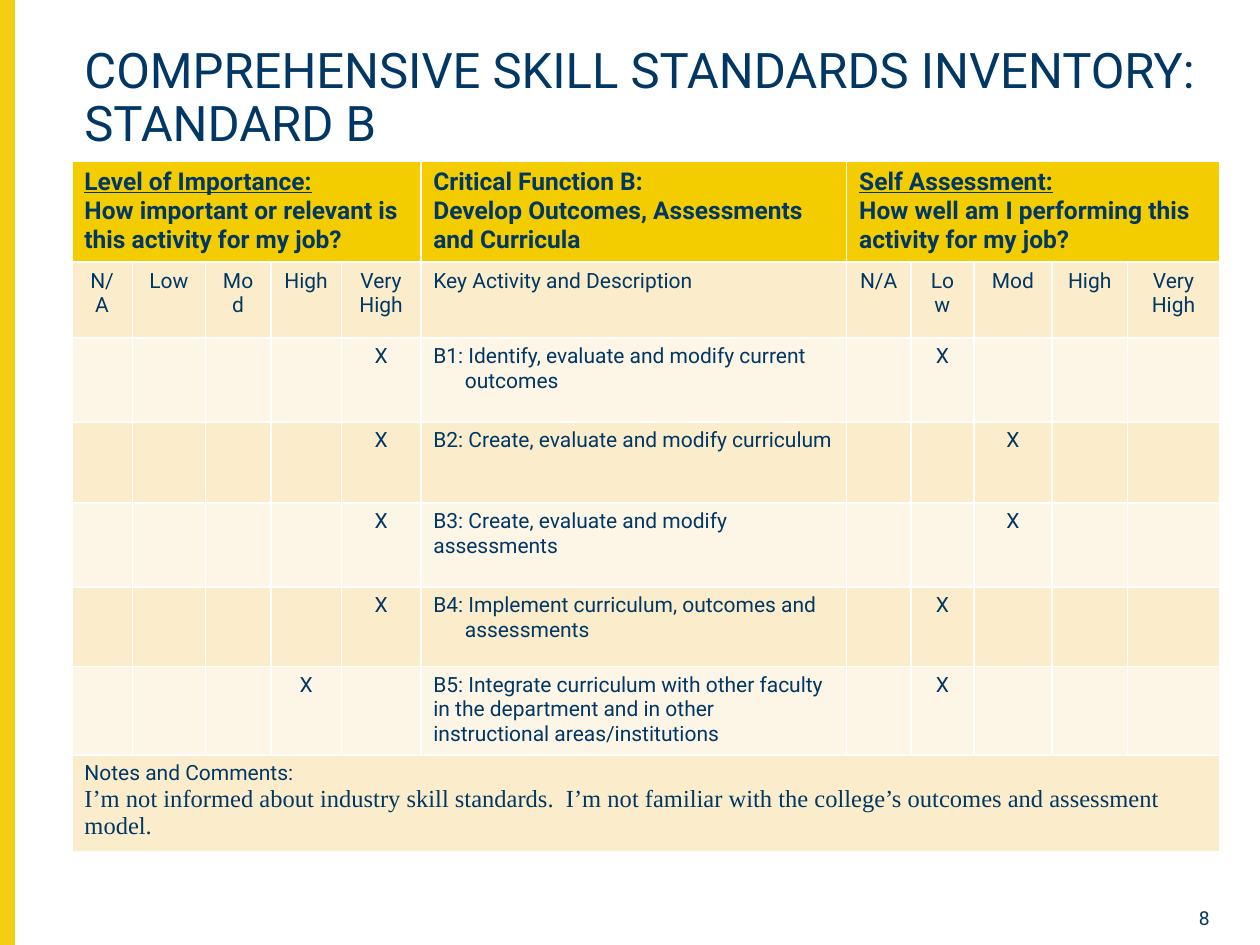
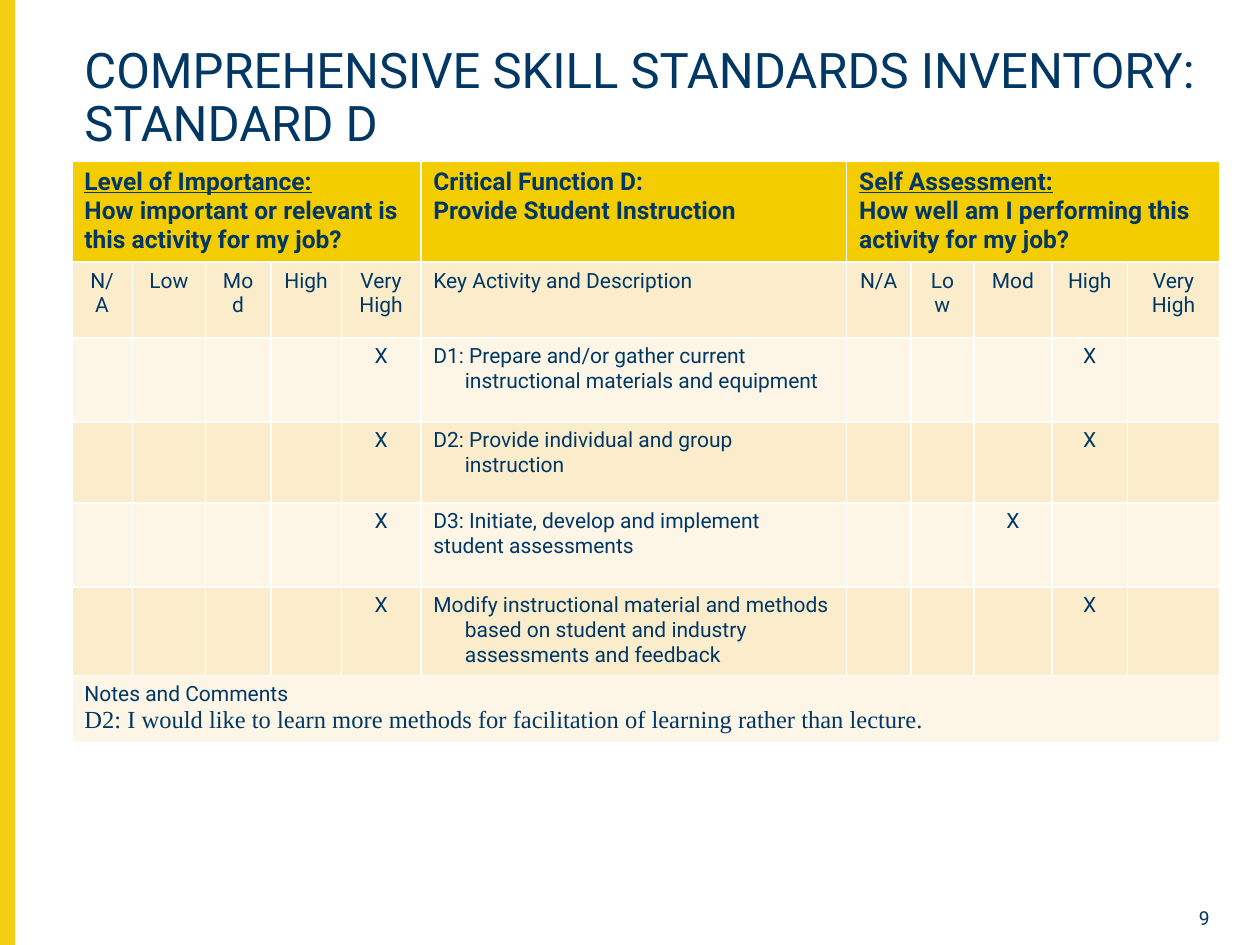
"""Build two skill standards inventory slides, each with a rating table."""
from pptx import Presentation
from pptx.dml.color import RGBColor
from pptx.enum.shapes import MSO_SHAPE
from pptx.enum.text import MSO_ANCHOR, MSO_AUTO_SIZE, PP_ALIGN
from pptx.util import Inches, Pt

LEVELS = ["N/A", "Low", "Mod", "High", "Very High"]
IMPORTANCE = ["Level of Importance:", "How important or relevant is this activity for my job?"]
ASSESSMENT = ["Self Assessment:", "How well am I performing this activity for my job?"]
KEY_HEADING = "Key Activity and Description"
TITLE_LINE = "COMPREHENSIVE SKILL STANDARDS INVENTORY:"

# Each activity: description, hanging indent, importance, self assessment
STANDARDS = [
    {
        "number": 8,
        "letter": "B",
        "function": "Develop Outcomes, Assessments and Curricula",
        "activities": [
            ("B1: Identify, evaluate and modify current outcomes", True, "Very High", "Low"),
            ("B2: Create, evaluate and modify curriculum", True, "Very High", "Mod"),
            ("B3: Create, evaluate and modify assessments", False, "Very High", "Mod"),
            ("B4: Implement curriculum, outcomes and assessments", True, "Very High", "Low"),
            ("B5: Integrate curriculum with other faculty in the department and in other "
             "instructional areas/institutions", False, "High", "Low"),
        ],
        "notes": ["Notes and Comments:",
                  "I’m not informed about industry skill standards.  I’m not familiar with "
                  "the college’s outcomes and assessment model."],
    },
    {
        "number": 9,
        "letter": "D",
        "function": "Provide Student Instruction",
        "activities": [
            ("D1: Prepare and/or gather current instructional materials and equipment",
             True, "Very High", "High"),
            ("D2: Provide individual and group instruction", True, "Very High", "High"),
            ("D3: Initiate, develop and implement student assessments",
             False, "Very High", "Mod"),
            ("Modify instructional material and methods based on student and industry "
             "assessments and feedback", True, "Very High", "High"),
        ],
        "notes": ["Notes and Comments",
                  "D2: I would like to learn more methods for facilitation of learning "
                  "rather than lecture."],
    },
]

NAVY = RGBColor(0x00, 0x37, 0x64)
BAND_YELLOW = RGBColor(0xF4, 0xCE, 0x12)
HEADER_YELLOW = RGBColor(0xF4, 0xCD, 0x00)
SAND = RGBColor(0xFB, 0xED, 0xCC)
CREAM = RGBColor(0xFD, 0xF6, 0xE7)

SLIDE_WIDTH, SLIDE_HEIGHT = 10, 7.5
LEFT = 0.57
COLUMN_WIDTHS = [0.48, 0.58, 0.52, 0.56, 0.63, 3.38, 0.51, 0.5, 0.62, 0.6, 0.73]
HEADER_HEIGHT, LEVELS_HEIGHT, NOTES_HEIGHT = 0.41, 0.6, 0.41
ACTIVITY_HEIGHTS = [0.67, 0.64, 0.67, 0.63, 0.55]
KEY_COLUMN = len(LEVELS)
ASSESSMENT_COLUMN = KEY_COLUMN + 1
LAST_COLUMN = len(COLUMN_WIDTHS) - 1

BODY = {"name": "Roboto", "size": Pt(12), "bold": False}
HEADING = {"name": "Roboto", "size": Pt(14), "bold": True}
UNDERLINED = {**HEADING, "underline": True}
COMMENT = {"name": "Times New Roman", "size": Pt(14), "bold": False}
TITLE = {"name": "Roboto", "size": Pt(28), "bold": False}
PAGE_NUMBER = {"name": "Roboto", "size": Pt(11)}


def format_font(font, values):
    for attribute, value in values.items():
        setattr(font, attribute, value)
    font.color.rgb = NAVY


def write(text_frame, lines, alignment=PP_ALIGN.LEFT):
    for index, (text, values) in enumerate(lines):
        paragraph = text_frame.add_paragraph() if index else text_frame.paragraphs[0]
        paragraph.alignment = alignment
        run = paragraph.add_run()
        run.text = text
        format_font(run.font, values)


def add_band(slide):
    band = slide.shapes.add_shape(
        MSO_SHAPE.RECTANGLE, 0, 0, Inches(0.11), Inches(SLIDE_HEIGHT))
    band.shadow.inherit = False
    band.fill.solid()
    band.fill.fore_color.rgb = BAND_YELLOW
    band.line.color.rgb = BAND_YELLOW
    band.line.width = Pt(1)


def add_title(slide, letter):
    title = slide.shapes.title
    box = {"left": LEFT, "top": 0.32, "width": 9.08, "height": 0.86}
    for attribute, value in box.items():
        setattr(title, attribute, Inches(value))
    frame = title.text_frame
    frame.word_wrap = True
    frame.auto_size = MSO_AUTO_SIZE.NONE
    frame.vertical_anchor = MSO_ANCHOR.TOP
    write(frame, [(TITLE_LINE, TITLE)])
    paragraph = frame.paragraphs[0]
    paragraph.line_spacing = 0.9
    paragraph.add_line_break()
    run = paragraph.add_run()
    run.text = f"STANDARD {letter}"
    format_font(run.font, TITLE)


def add_page_number(slide, number):
    box = slide.shapes.add_textbox(Inches(9.2), Inches(7.14), Inches(0.5), Inches(0.21))
    box.text_frame.word_wrap = True
    write(box.text_frame, [(str(number), PAGE_NUMBER)], PP_ALIGN.RIGHT)


def fill_header(table, standard):
    function = [f"Critical Function {standard['letter']}:", standard["function"]]
    groups = [
        (0, KEY_COLUMN - 1, IMPORTANCE, UNDERLINED),
        (KEY_COLUMN, KEY_COLUMN, function, HEADING),
        (ASSESSMENT_COLUMN, LAST_COLUMN, ASSESSMENT, UNDERLINED),
    ]
    for first, last, (heading, question), style in groups:
        cell = table.cell(0, first)
        if last > first:
            cell.merge(table.cell(0, last))
        write(cell.text_frame, [(heading, style), (question, HEADING)])


def fill_levels(table):
    for start in (0, ASSESSMENT_COLUMN):
        for offset, level in enumerate(LEVELS):
            lines = [(word, BODY) for word in level.split()]
            write(table.cell(1, start + offset).text_frame, lines, PP_ALIGN.CENTER)
    write(table.cell(1, KEY_COLUMN).text_frame, [(KEY_HEADING, BODY)])


def fill_activities(table, activities):
    for row, (text, hanging, importance, assessment) in enumerate(activities, start=2):
        frame = table.cell(row, KEY_COLUMN).text_frame
        write(frame, [(text, BODY)])
        if hanging:
            properties = frame.paragraphs[0]._p.get_or_add_pPr()
            properties.set("marL", str(Inches(0.25)))
            properties.set("indent", str(-Inches(0.25)))
        for start, level in ((0, importance), (ASSESSMENT_COLUMN, assessment)):
            cell = table.cell(row, start + LEVELS.index(level))
            write(cell.text_frame, [("X", BODY)], PP_ALIGN.CENTER)


def add_inventory(slide, standard):
    activities = standard["activities"]
    heights = [HEADER_HEIGHT, LEVELS_HEIGHT,
               *ACTIVITY_HEIGHTS[:len(activities)], NOTES_HEIGHT]
    table = slide.shapes.add_table(
        len(heights), len(COLUMN_WIDTHS), Inches(LEFT), Inches(1.28),
        Inches(sum(COLUMN_WIDTHS)), Inches(sum(heights))).table
    for column, width in zip(table.columns, COLUMN_WIDTHS):
        column.width = Inches(width)
    for index, (row, height) in enumerate(zip(table.rows, heights)):
        row.height = Inches(height)
        colour = (SAND if index % 2 else CREAM) if index else HEADER_YELLOW
        for cell in row.cells:
            cell.fill.solid()
            cell.fill.fore_color.rgb = colour
    fill_header(table, standard)
    fill_levels(table)
    fill_activities(table, activities)
    notes_row = len(heights) - 1
    notes = table.cell(notes_row, 0)
    notes.merge(table.cell(notes_row, LAST_COLUMN))
    write(notes.text_frame, list(zip(standard["notes"], (BODY, COMMENT))))


def main():
    presentation = Presentation()
    presentation.slide_width = Inches(SLIDE_WIDTH)
    presentation.slide_height = Inches(SLIDE_HEIGHT)
    for standard in STANDARDS:
        slide = presentation.slides.add_slide(presentation.slide_layouts[5])
        add_band(slide)
        add_page_number(slide, standard["number"])
        add_title(slide, standard["letter"])
        add_inventory(slide, standard)
    presentation.save("out.pptx")


if __name__ == "__main__":
    main()
